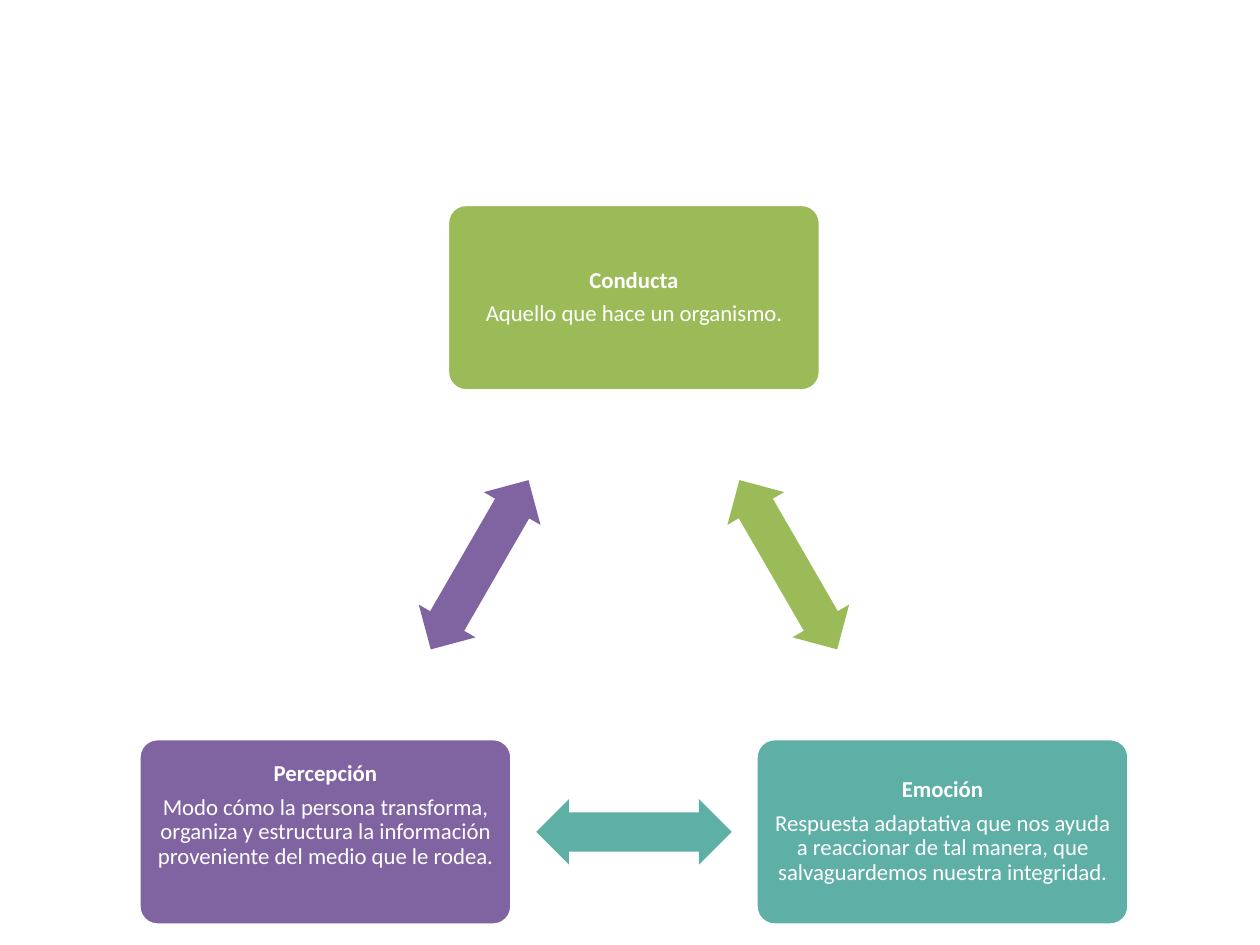
from dataclasses import dataclass
from math import atan2, degrees

from pptx import Presentation
from pptx.dml.color import RGBColor
from pptx.enum.shapes import MSO_SHAPE
from pptx.enum.text import MSO_ANCHOR, PP_ALIGN
from pptx.util import Cm, Pt


@dataclass(frozen=True)
class Theme:
    font: str = "Calibri"
    size: float = 13
    white: str = "FFFFFF"
    green: str = "9BBB59"
    teal: str = "5EAFA6"
    purple: str = "8064A2"


@dataclass(frozen=True)
class Concept:
    title: str
    definition: str
    color: str
    center: tuple
    bottom_inset: float = 0.13


THEME = Theme()
CARD_SIZE = (7.52, 3.76)
ARROW_SIZE = (3.94, 1.32)
CONCEPTS = [
    Concept("Conducta", "Aquello que hace un organismo.", THEME.green, (12.78, 6)),
    Concept(
        "Emoción",
        "Respuesta adaptativa que nos ayuda a reaccionar de tal manera, "
        "que salvaguardemos nuestra integridad.",
        THEME.teal,
        (19, 16.77),
    ),
    Concept(
        "Percepción",
        "Modo cómo la persona transforma, organiza y estructura la información "
        "proveniente del medio que le rodea.",
        THEME.purple,
        (6.56, 16.77),
        bottom_inset=0.78,
    ),
]


def add_centered_shape(page, kind, center, size, color):
    left, top = (middle - length / 2 for middle, length in zip(center, size))
    shape = page.shapes.add_shape(kind, Cm(left), Cm(top), Cm(size[0]), Cm(size[1]))
    shape.shadow.inherit = False
    shape.fill.solid()
    shape.fill.fore_color.rgb = RGBColor.from_string(color)
    shape.line.fill.background()
    return shape


def add_line(para, text, bold):
    para.alignment = PP_ALIGN.CENTER
    para.line_spacing = 0.9
    para.space_after = Pt(5)
    span = para.add_run()
    span.text = text
    span.font.name = THEME.font
    span.font.size = Pt(THEME.size)
    span.font.bold = bold
    span.font.color.rgb = RGBColor.from_string(THEME.white)


def add_card(page, concept):
    card = add_centered_shape(
        page, MSO_SHAPE.ROUNDED_RECTANGLE, concept.center, CARD_SIZE, concept.color
    )
    card.adjustments[0] = 0.1
    card.line.color.rgb = RGBColor.from_string(THEME.white)
    card.line.width = Pt(2)
    frame = card.text_frame
    frame.word_wrap = True
    frame.vertical_anchor = MSO_ANCHOR.MIDDLE
    frame.margin_left = frame.margin_right = frame.margin_top = Cm(0.13)
    frame.margin_bottom = Cm(concept.bottom_inset)
    add_line(frame.paragraphs[0], concept.title, True)
    add_line(frame.add_paragraph(), concept.definition, False)


def add_arrow(page, start, end):
    (start_x, start_y), (end_x, end_y) = start.center, end.center
    middle = ((start_x + end_x) / 2, (start_y + end_y) / 2)
    arrow = add_centered_shape(
        page, MSO_SHAPE.LEFT_RIGHT_ARROW, middle, ARROW_SIZE, start.color
    )
    arrow.adjustments[0] = 0.6
    arrow.adjustments[1] = 0.5
    arrow.rotation = round(degrees(atan2(end_y - start_y, end_x - start_x))) % 360


def main():
    deck = Presentation()
    deck.slide_width, deck.slide_height = Cm(25.4), Cm(19.05)
    page = deck.slides.add_slide(deck.slide_layouts[6])
    for concept, following in zip(CONCEPTS, CONCEPTS[1:] + CONCEPTS[:1]):
        add_card(page, concept)
        add_arrow(page, concept, following)
    deck.save("out.pptx")


if __name__ == "__main__":
    main()
